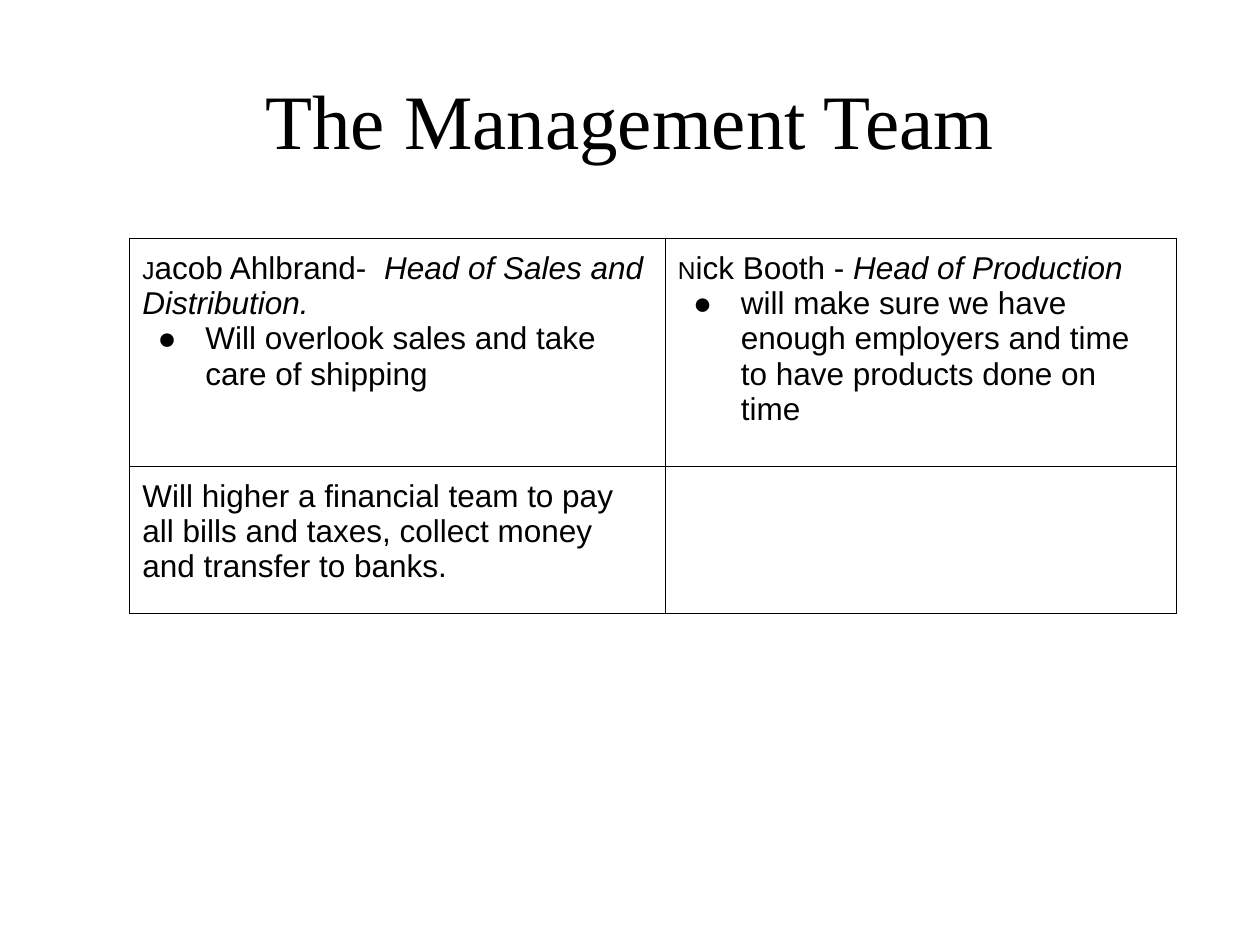
from lxml.etree import SubElement
from pptx import Presentation
from pptx.dml.color import RGBColor
from pptx.enum.text import MSO_ANCHOR, PP_ALIGN
from pptx.oxml.ns import qn
from pptx.util import Inches, Pt

COLORS = {"ink": "000000", "paper": "FFFFFF"}
BODY = {"name": "Arial", "size": Pt(18)}
INITIAL = {**BODY, "size": Pt(14)}
ROLE = {**BODY, "italic": True}
HEADING = {"name": "Times New Roman", "size": Pt(44)}

# Each cell is a list of (bulleted, runs) paragraphs; each run is (text, format).
TEAM = [
    [
        [
            (False, [("J", INITIAL), ("acob Ahlbrand-  ", BODY),
                     ("Head of Sales and Distribution.", ROLE)]),
            (True, [("Will overlook sales and take care of shipping", BODY)]),
        ],
        [
            (False, [("N", INITIAL), ("ick Booth - ", BODY),
                     ("Head of Production", ROLE)]),
            (True, [("will make sure we have enough employers and time to "
                     "have products done on time", BODY)]),
        ],
    ],
    [
        [
            (False, [("Will higher a financial team to pay all bills and taxes, "
                      "collect money and transfer to banks.", BODY)]),
        ],
        [],
    ],
]


def add_run(paragraph, text, style):
    run = paragraph.add_run()
    run.text = text
    for attribute, value in style.items():
        setattr(run.font, attribute, value)
    run.font.color.rgb = RGBColor.from_string(COLORS["ink"])


def add_bullet(paragraph):
    properties = paragraph._p.get_or_add_pPr()
    properties.set("marL", str(Inches(0.5)))
    properties.set("indent", str(Inches(-0.38)))
    SubElement(properties, qn("a:buFont"), typeface="Arial")
    SubElement(properties, qn("a:buChar"), char="●")


def add_borders(cell):
    properties = cell._tc.get_or_add_tcPr()
    for position, side in enumerate(("lnL", "lnR", "lnT", "lnB")):
        line = SubElement(properties, qn(f"a:{side}"), w=str(Pt(0.75)))
        fill = SubElement(line, qn("a:solidFill"))
        SubElement(fill, qn("a:srgbClr"), val=COLORS["ink"])
        properties.insert(position, line)


def fill_cell(cell, paragraphs):
    for side in ("left", "top", "right", "bottom"):
        setattr(cell, f"margin_{side}", Inches(0.1))
    cell.fill.background()
    add_borders(cell)
    frame = cell.text_frame
    for index, (bulleted, runs) in enumerate(paragraphs):
        paragraph = frame.add_paragraph() if index else frame.paragraphs[0]
        if bulleted:
            add_bullet(paragraph)
        for text, style in runs:
            add_run(paragraph, text, style)


def add_title(slide, left, top, width, height):
    frame = slide.shapes.add_textbox(left, top, width, height).text_frame
    frame.word_wrap = True
    frame.vertical_anchor = MSO_ANCHOR.MIDDLE
    heading = frame.paragraphs[0]
    heading.alignment = PP_ALIGN.CENTER
    add_run(heading, "The Management Team", HEADING)


def add_team_table(slide, left, top, widths, heights):
    table = slide.shapes.add_table(
        len(heights), len(widths), left, top, sum(widths), sum(heights)
    ).table
    table.first_row = table.horz_banding = False
    for column, width in zip(table.columns, widths):
        column.width = width
    for row, height, contents in zip(table.rows, heights, TEAM):
        row.height = height
        for cell, paragraphs in zip(row.cells, contents):
            fill_cell(cell, paragraphs)


def main():
    deck = Presentation()
    deck.slide_width, deck.slide_height = Inches(10), Inches(7.5)
    slide = deck.slides.add_slide(deck.slide_layouts[6])
    background = slide.background.fill
    background.solid()
    background.fore_color.rgb = RGBColor.from_string(COLORS["paper"])
    add_title(slide, Inches(0.5), Inches(0.32), Inches(9), Inches(1.25))
    add_team_table(slide, Inches(1.03), Inches(1.89),
                   [Inches(4.25), Inches(4.06)], [Inches(1.81), Inches(1.17)])
    deck.save("out.pptx")


if __name__ == "__main__":
    main()
